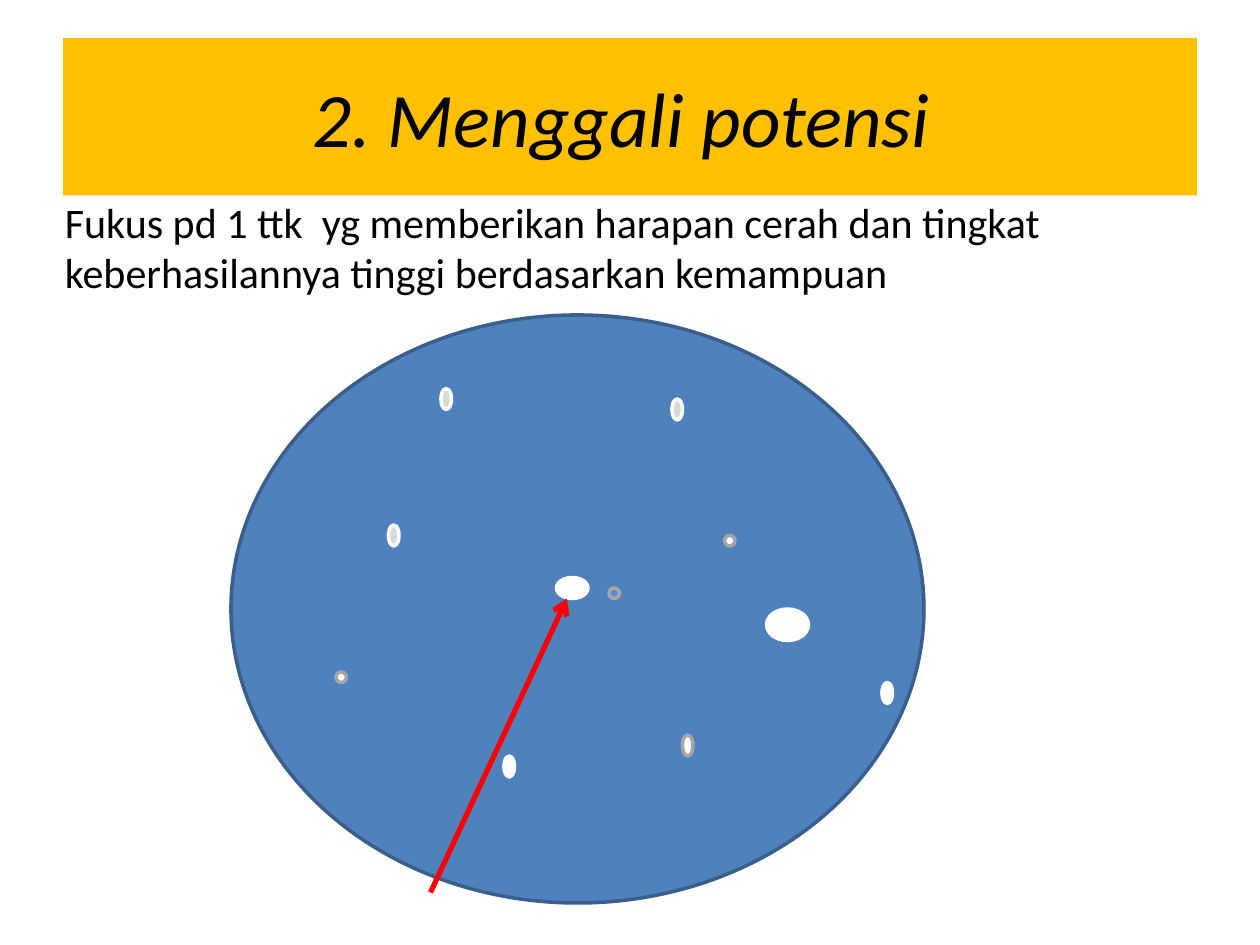
"""Build the slide on finding potential: one bright spot picked out in a field of dots."""
from dataclasses import dataclass

from lxml.etree import SubElement
from pptx import Presentation
from pptx.dml.color import RGBColor
from pptx.enum.shapes import MSO_CONNECTOR, MSO_SHAPE
from pptx.enum.text import MSO_ANCHOR, MSO_AUTO_SIZE, PP_ALIGN
from pptx.oxml.ns import qn
from pptx.util import Inches, Pt


@dataclass(frozen=True)
class Theme:
    font: str = "Calibri"
    title_size: int = 44
    body_size: int = 24
    outline: int = 2
    arrow_width: int = 3
    text: str = "000000"
    banner: str = "FFC000"
    field: str = "4F81BD"
    field_edge: str = "3A5F8C"
    white: str = "FFFFFF"
    silver: str = "D9D9D9"
    grey: str = "A6A6A6"
    blue: str = "558ED5"
    arrow: str = "FF0000"


THEME = Theme()
COLUMNS, ROWS = 120, 90
TITLE = "2. Menggali potensi "
BODY = ("Fukus pd 1 ttk  yg memberikan harapan cerah dan tingkat "
        "keberhasilannya tinggi berdasarkan kemampuan")
TITLE_BOX = (6, 3.6, 108, 15)
BODY_BOX = (5, 18.1, 98, 10.9)
FIELD = (22, 30, 66, 56)
ARROW = ((41, 85), (54, 57))
ROUND, TALL = (1, 1), (1, 2)
DOTS = [
    ((53, 55), (3, 2), THEME.white, THEME.white),
    ((69, 51), ROUND, THEME.white, THEME.grey),
    ((58, 56), ROUND, THEME.blue, THEME.grey),
    ((37, 50), TALL, THEME.silver, THEME.white),
    ((32, 64), ROUND, THEME.white, THEME.grey),
    ((65, 70), TALL, THEME.white, THEME.grey),
    ((73, 58), (4, 3), THEME.white, THEME.white),
    ((84, 65), TALL, THEME.white, THEME.white),
    ((48, 72), TALL, THEME.white, THEME.white),
    ((64, 38), TALL, THEME.silver, THEME.white),
    ((42, 37), TALL, THEME.silver, THEME.white),
]


def color(code):
    return RGBColor.from_string(code)


def main():
    deck = Presentation()
    deck.slide_width, deck.slide_height = Inches(10), Inches(7.5)
    slide = deck.slides.add_slide(deck.slide_layouts[5])

    def place(values):
        spans = (deck.slide_width / COLUMNS, deck.slide_height / ROWS) * 2
        return [round(value * span) for value, span in zip(values, spans)]

    def write(frame, words, size, italic=None):
        run = frame.paragraphs[0].add_run()
        run.text = words
        run.font.name, run.font.size = THEME.font, Pt(size)
        run.font.italic = italic
        run.font.color.rgb = color(THEME.text)

    def add_ellipse(box, fill, edge):
        ellipse = slide.shapes.add_shape(MSO_SHAPE.OVAL, *place(box))
        ellipse.shadow.inherit = False
        ellipse.fill.solid()
        ellipse.fill.fore_color.rgb = color(fill)
        ellipse.line.color.rgb = color(edge)
        ellipse.line.width = Pt(THEME.outline)

    title = slide.shapes.title
    title.left, title.top, title.width, title.height = place(TITLE_BOX)
    title.fill.solid()
    title.fill.fore_color.rgb = color(THEME.banner)
    title.text_frame.vertical_anchor = MSO_ANCHOR.MIDDLE
    title.text_frame.paragraphs[0].alignment = PP_ALIGN.CENTER
    write(title.text_frame, TITLE, THEME.title_size, italic=True)

    add_ellipse(FIELD, THEME.field, THEME.field_edge)
    for corner, size, fill, edge in DOTS:
        add_ellipse(corner + size, fill, edge)

    body = slide.shapes.add_textbox(*place(BODY_BOX)).text_frame
    body.word_wrap = True
    body.auto_size = MSO_AUTO_SIZE.SHAPE_TO_FIT_TEXT
    write(body, BODY, THEME.body_size)

    start, end = ARROW
    arrow = slide.shapes.add_connector(MSO_CONNECTOR.STRAIGHT, *place(start + end))
    arrow.line.color.rgb = color(THEME.arrow)
    arrow.line.width = Pt(THEME.arrow_width)
    SubElement(arrow.line._get_or_add_ln(), qn("a:tailEnd"), type="arrow")
    SubElement(arrow._element.spPr, qn("a:effectLst"))

    deck.save("out.pptx")


if __name__ == "__main__":
    main()
